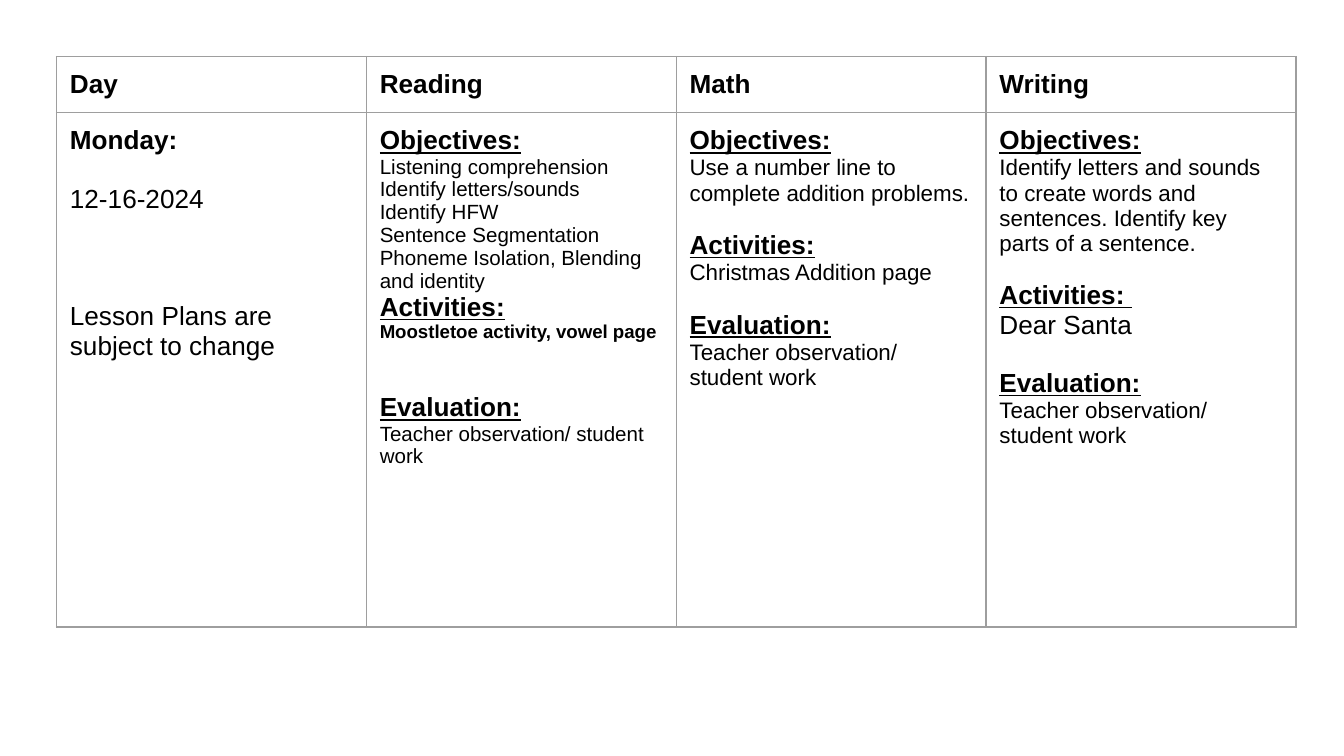
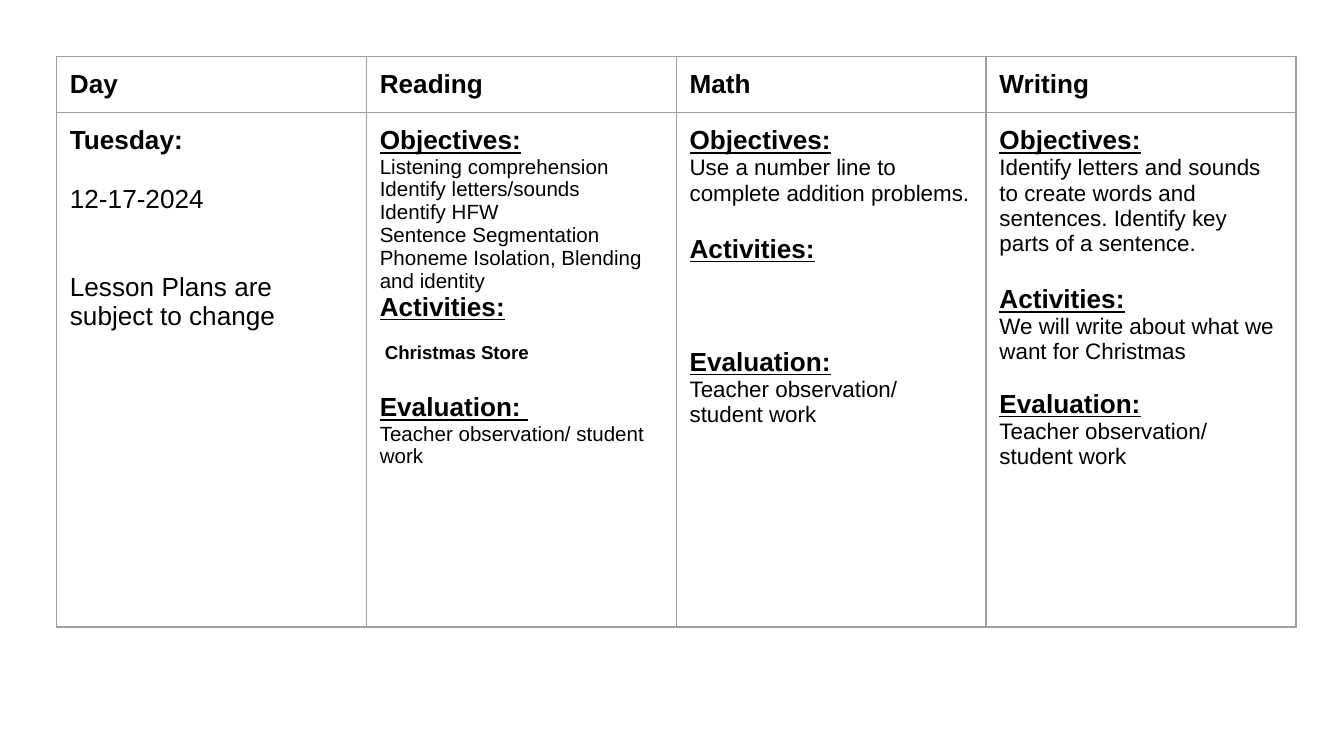
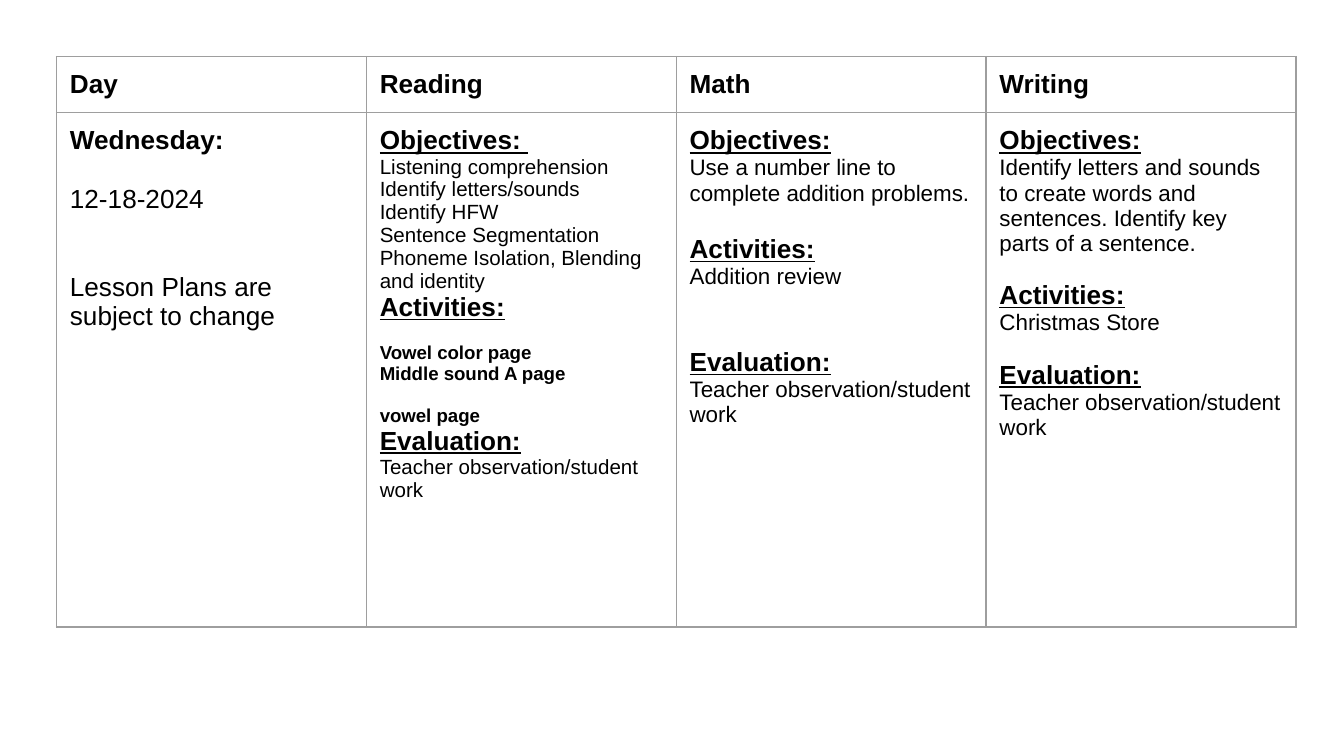
"""Build three daily lesson plan slides, each with one table of subjects."""
from lxml import etree
from pptx import Presentation
from pptx.dml.color import RGBColor
from pptx.enum.text import MSO_ANCHOR, PP_ALIGN
from pptx.oxml.ns import qn
from pptx.util import Pt

TOP = MSO_ANCHOR.TOP
LEFT = PP_ALIGN.LEFT

TEXT_COLOR = RGBColor(0x00, 0x00, 0x00)
BORDER_COLOR = RGBColor(0x9E, 0x9E, 0x9E)
BACKGROUND = RGBColor(0xFF, 0xFF, 0xFF)
FONT = "Arial"
BLANK_LAYOUT = 6
LINE_HEIGHT = 1.12

TABLE_LEFT, TABLE_TOP = 30.25, 30.25
COLUMN_WIDTH = 166
ROW_HEIGHTS = (27.5, 275.5)
CELL_MARGIN = 7.2
BORDER_WIDTH = 0.75

LABEL = {"size": Pt(14), "bold": True, "underline": False}
HEADING = {"size": Pt(14), "bold": True, "underline": True}
LARGE = {"size": Pt(14), "bold": False, "underline": False}
BODY = {"size": Pt(12), "bold": False, "underline": False}
SMALL = {"size": Pt(11), "bold": False, "underline": False}
NOTE = {"size": Pt(10), "bold": True, "underline": False}

SUBJECTS = ("Day", "Reading", "Math", "Writing")
READING_GOALS = (
    "Listening comprehension",
    "Identify letters/sounds",
    "Identify HFW",
    "Sentence Segmentation",
    "Phoneme Isolation, Blending and identity",
)
MATH_GOALS = ("Use a number line to complete addition problems.",)
WRITING_GOALS = (
    "Identify letters and sounds",
    "to create words and",
    "sentences. Identify key parts of a sentence.",
)
SPACED_EVALUATION = ("Teacher observation/ student work",)
EVALUATION = ("Teacher observation/student work",)


def gap(*sizes):
    """Return the space taken by lines of the given text sizes."""
    return round(sum(sizes) * LINE_HEIGHT, 2)


def line(text, style, before=0):
    """Describe one paragraph and the space above it."""
    return text, style, before


def section(heading, texts, style, before=0):
    """Describe an underlined heading and the lines below it."""
    return [line(heading, HEADING, before)] + [line(text, style) for text in texts]


def day_cell(name, date, note_gap):
    """Describe the day, its date and the note on changes."""
    return [
        line(name, LABEL),
        line(date, LARGE, gap(14)),
        line("Lesson Plans are subject to change", LARGE, note_gap),
    ]


MONDAY = (
    day_cell("Monday:", "12-16-2024", gap(14, 14, 14)),
    section("Objectives:", READING_GOALS, SMALL)
    + section("Activities:", ("Moostletoe activity, vowel page",), NOTE)
    + section("Evaluation:", SPACED_EVALUATION, SMALL, gap(10, 14)),
    section("Objectives:", MATH_GOALS, BODY)
    + section("Activities:", ("Christmas Addition page",), BODY, gap(12))
    + section("Evaluation:", SPACED_EVALUATION, BODY, gap(12)),
    section("Objectives:", WRITING_GOALS, BODY)
    + section("Activities: ", ("Dear Santa",), LARGE, gap(12))
    + section("Evaluation:", SPACED_EVALUATION, BODY, gap(14)),
)
TUESDAY = (
    day_cell("Tuesday:", "12-17-2024", gap(14, 14)),
    section("Objectives:", READING_GOALS, SMALL)
    + section("Activities:", (), NOTE)
    + [line(" Christmas Store", NOTE, gap(10))]
    + section("Evaluation: ", SPACED_EVALUATION, SMALL, gap(14)),
    section("Objectives:", MATH_GOALS, BODY)
    + section("Activities:", (), BODY, gap(14))
    + section("Evaluation:", SPACED_EVALUATION, BODY, gap(12, 14, 14)),
    section("Objectives:", WRITING_GOALS, BODY)
    + section("Activities:", ("We will write about what we want for Christmas",), BODY, gap(14))
    + section("Evaluation:", SPACED_EVALUATION, BODY, gap(12)),
)
WEDNESDAY = (
    day_cell("Wednesday:", "12-18-2024", gap(14, 14)),
    section("Objectives: ", READING_GOALS, SMALL)
    + section("Activities:", (), NOTE)
    + [
        line("Vowel color page", NOTE, gap(10)),
        line("Middle sound A page", NOTE),
        line("vowel page", NOTE, gap(10)),
    ]
    + section("Evaluation:", EVALUATION, SMALL),
    section("Objectives:", MATH_GOALS, BODY)
    + section("Activities:", ("Addition review",), BODY, gap(14))
    + section("Evaluation:", EVALUATION, BODY, gap(14, 14)),
    section("Objectives:", WRITING_GOALS, BODY)
    + section("Activities:", ("Christmas Store",), BODY, gap(12))
    + section("Evaluation:", EVALUATION, BODY, gap(12)),
)


def add_borders(cell):
    """Draw a thin line on all four sides of a cell."""
    properties = cell._tc.get_or_add_tcPr()
    for side in ("a:lnL", "a:lnR", "a:lnT", "a:lnB"):
        border = etree.SubElement(properties, qn(side), w=str(Pt(BORDER_WIDTH)))
        fill = etree.SubElement(border, qn("a:solidFill"))
        etree.SubElement(fill, qn("a:srgbClr"), val=str(BORDER_COLOR))


def write_lines(text_frame, lines):
    """Write one formatted paragraph for each line."""
    for index, (text, style, before) in enumerate(lines):
        paragraph = text_frame.add_paragraph() if index else text_frame.paragraphs[0]
        paragraph.alignment = LEFT
        paragraph.space_before = Pt(before)
        run = paragraph.add_run()
        run.text = text
        run.font.color.rgb = TEXT_COLOR
        for name, value in {"name": FONT, **style}.items():
            setattr(run.font, name, value)


def format_cell(cell, lines):
    """Set the margins, borders and text of a cell."""
    for side in ("left", "right", "top", "bottom"):
        setattr(cell, f"margin_{side}", Pt(CELL_MARGIN))
    cell.vertical_anchor = TOP
    add_borders(cell)
    cell.fill.background()
    write_lines(cell.text_frame, lines)


def add_plan_table(slide, plan):
    """Add the table with a header row and one row for the day."""
    rows = ([[line(subject, LABEL)] for subject in SUBJECTS], plan)
    frame = slide.shapes.add_table(
        len(rows), len(SUBJECTS), Pt(TABLE_LEFT), Pt(TABLE_TOP),
        Pt(COLUMN_WIDTH * len(SUBJECTS)), Pt(sum(ROW_HEIGHTS)),
    )
    table = frame.table
    table.first_row = False
    table.horz_banding = False
    for column in table.columns:
        column.width = Pt(COLUMN_WIDTH)
    for row_index, cells in enumerate(rows):
        table.rows[row_index].height = Pt(ROW_HEIGHTS[row_index])
        for column_index, lines in enumerate(cells):
            format_cell(table.cell(row_index, column_index), lines)


def main():
    """Build and save the presentation."""
    presentation = Presentation()
    presentation.slide_width = Pt(720)
    presentation.slide_height = Pt(405)
    for plan in (MONDAY, TUESDAY, WEDNESDAY):
        slide = presentation.slides.add_slide(presentation.slide_layouts[BLANK_LAYOUT])
        slide.background.fill.solid()
        slide.background.fill.fore_color.rgb = BACKGROUND
        add_plan_table(slide, plan)
    presentation.save("out.pptx")


if __name__ == "__main__":
    main()
